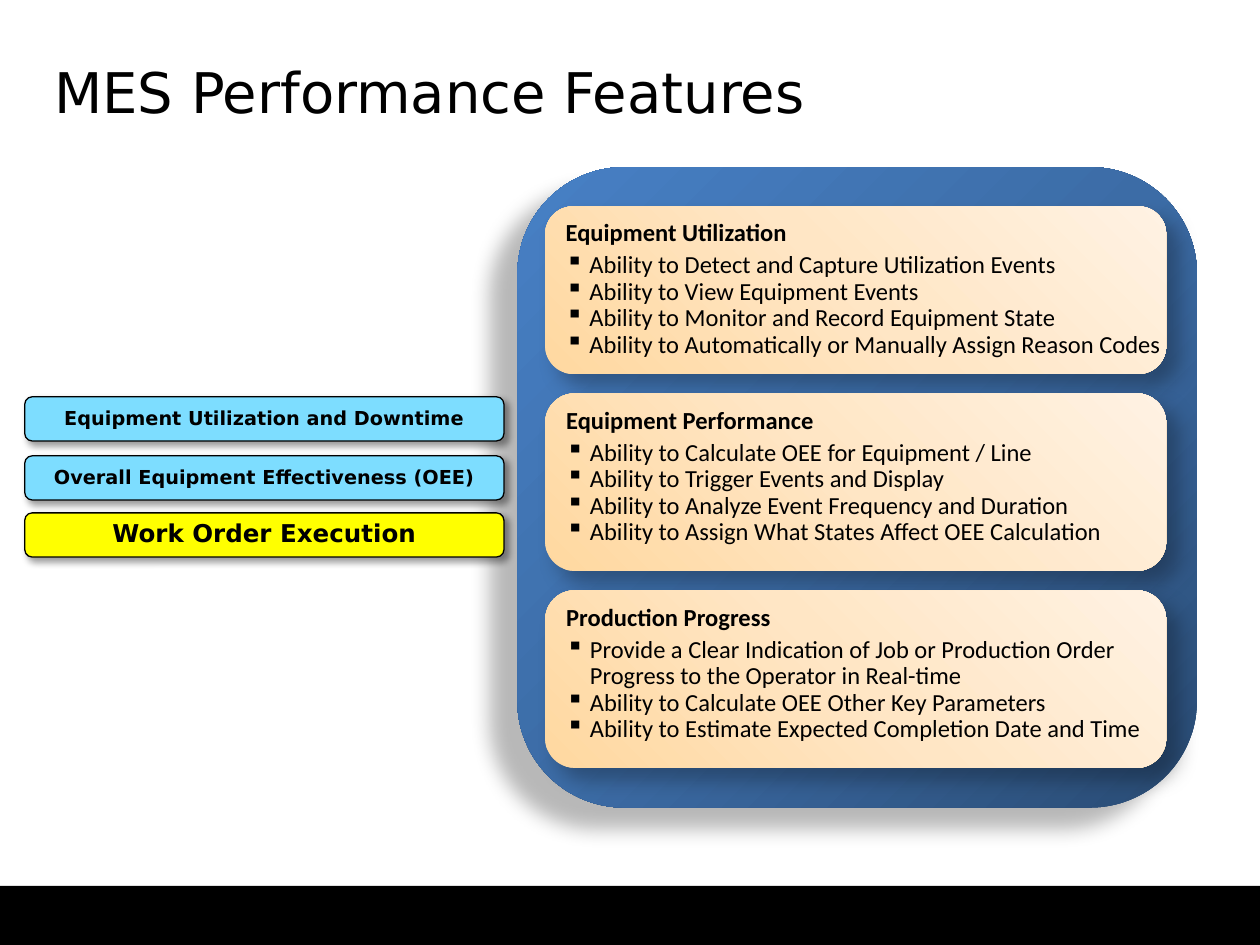
import pptx
import pptx.util
import pptx.dml.color
import pptx.enum.shapes
import pptx.enum.text
import pptx.oxml
import pptx.oxml.ns
from lxml import etree

Cm = pptx.util.Cm
Pt = pptx.util.Pt
SHAPES = pptx.enum.shapes.MSO_SHAPE
ALIGN = pptx.enum.text.PP_ALIGN
ANCHOR = pptx.enum.text.MSO_ANCHOR

BLACK = "000000"
BLUE_STOPS = ["2A4C75", "3C6CA6", "4780C5"]
TAN_STOPS = ["FFD8A0", "FFE6C5", "FFF2E3"]
BULLET_INDENT = Cm(0.48)

PANELS = [
    (3.38, False, "Equipment Utilization", [
        "Ability to Detect and Capture Utilization Events",
        "Ability to View Equipment Events",
        "Ability to Monitor and Record Equipment State",
        "Ability to Automatically or Manually Assign Reason Codes"]),
    (3.58, False, "Equipment Performance", [
        "Ability to Calculate OEE for Equipment / Line",
        "Ability to Trigger Events and Display",
        "Ability to Analyze Event Frequency and Duration",
        "Ability to Assign What States Affect OEE Calculation"]),
    (3.58, True, "Production Progress", [
        "Provide a Clear Indication of Job or Production Order "
        "Progress to the Operator in Real-time",
        "Ability to Calculate OEE Other Key Parameters",
        "Ability to Estimate Expected Completion Date and Time"]),
]

# Top offset, label, fill, text size
LABELS = [
    (0, "Equipment Utilization and Downtime", "7DDDFF", 11),
    (1.19, "Overall Equipment Effectiveness (OEE)", "7DDDFF", 11),
    (2.34, "Work Order Execution", "FFFF00", 14),
]


def color(value):
    return pptx.dml.color.RGBColor.from_string(value)


def sub(parent, tag, **attributes):
    element = etree.SubElement(parent, pptx.oxml.ns.qn(tag))
    for name, value in attributes.items():
        element.set(name, str(value))
    return element


def write(paragraph, text, size=14, font="Calibri", bold=False, bullet=False,
          align=ALIGN.LEFT, line_spacing=0.9, space_after=0):
    paragraph.alignment = align
    paragraph.line_spacing = line_spacing
    paragraph.space_after = Pt(space_after)
    if bullet:
        properties = paragraph._p.get_or_add_pPr()
        properties.set("marL", str(BULLET_INDENT))
        properties.set("indent", str(-BULLET_INDENT))
        sub(properties, "a:buChar", char="▪")
    run = paragraph.add_run()
    run.text = text
    run.font.size = Pt(size)
    run.font.name = font
    run.font.bold = bold
    run.font.color.rgb = color(BLACK)


def add_box(slide, box, fill, kind=SHAPES.ROUNDED_RECTANGLE, line=None):
    shape = slide.shapes.add_shape(kind, *[Cm(length) for length in box])
    shape.shadow.inherit = False
    if fill:
        shape.fill.solid()
        shape.fill.fore_color.rgb = color(fill)
    if line:
        shape.line.color.rgb = color(line)
        shape.line.width = Pt(0.75)
    else:
        shape.line.fill.background()
    return shape


def set_gradient(shape, stops, angle):
    """Spread the stops evenly; the angle runs clockwise."""
    shape.fill.gradient()
    shape.fill.gradient_angle = 360 - angle
    stop_list = shape._element.spPr.find(".//" + pptx.oxml.ns.qn("a:gsLst"))
    for stop in list(stop_list):
        stop_list.remove(stop)
    for index, value in enumerate(stops):
        stop = sub(stop_list, "a:gs", pos=100000 * index // (len(stops) - 1))
        sub(stop, "a:srgbClr", val=value)


def set_shadow(shape, opacity, blur, distance, angle):
    effects = shape._element.spPr.find(pptx.oxml.ns.qn("a:effectLst"))
    shadow = sub(effects, "a:outerShdw", blurRad=Pt(blur), dist=Pt(distance),
                 dir=angle * 60000, algn="ctr", rotWithShape=0)
    sub(sub(shadow, "a:srgbClr", val=BLACK), "a:alpha", val=opacity * 1000)


def add_title(slide, left, top, width, height):
    title = slide.shapes.title
    title.left, title.top, title.width, title.height = map(
        Cm, (left, top, width, height))
    frame = title.text_frame
    frame.margin_left = frame.margin_right = 0
    frame.margin_top = frame.margin_bottom = 0
    frame.vertical_anchor = ANCHOR.TOP
    frame.word_wrap = True
    write(frame.paragraphs[0], "MES Performance Features", size=32,
          font="DejaVu Sans", line_spacing=Pt(35))


def add_feature_panel(slide, box, wrap, heading, features):
    panel = add_box(slide, box, None)
    set_gradient(panel, TAN_STOPS, 315)
    set_shadow(panel, 28, 11.8, 10, 45)
    frame = panel.text_frame
    frame.word_wrap = wrap
    frame.vertical_anchor = ANCHOR.TOP
    write(frame.paragraphs[0], heading, bold=True, space_after=3)
    for feature in features:
        write(frame.add_paragraph(), feature, bullet=True)


def add_features(slide, left, top, width, height):
    backdrop = add_box(slide, (left, top, width, height), None)
    set_gradient(backdrop, BLUE_STOPS, 225)
    set_shadow(backdrop, 28, 11.8, 19.7, 141)
    # Panels stacked with an equal gap
    panel_top = top + 0.79
    for panel_height, wrap, heading, features in PANELS:
        box = (left + 0.56, panel_top, 12.52, panel_height)
        add_feature_panel(slide, box, wrap, heading, features)
        panel_top += panel_height + 0.39


def add_labels(slide, left, top, width, height):
    for offset, text, fill, size in LABELS:
        label = add_box(slide, (left, top + offset, width, height), fill,
                        line=BLACK)
        set_shadow(label, 40, 4, 3, 45)
        label.text_frame.word_wrap = True
        label.text_frame.vertical_anchor = ANCHOR.MIDDLE
        write(label.text_frame.paragraphs[0], text, size=size, bold=True,
              font="DejaVu Sans", align=ALIGN.CENTER)


def main():
    presentation = pptx.Presentation()
    presentation.slide_width = Cm(25.4)
    presentation.slide_height = Cm(19.05)
    slide = presentation.slides.add_slide(presentation.slide_layouts[5])
    # Footer bar
    add_box(slide, (0, 17.86, 25.4, 1.19), BLACK, kind=SHAPES.RECTANGLE)
    add_title(slide, 1.09, 1.27, 23.01, 1.96)
    add_features(slide, 10.43, 3.37, 13.7, 12.91)
    add_labels(slide, 0.5, 8, 9.66, 0.89)
    presentation.save("out.pptx")


if __name__ == "__main__":
    main()
